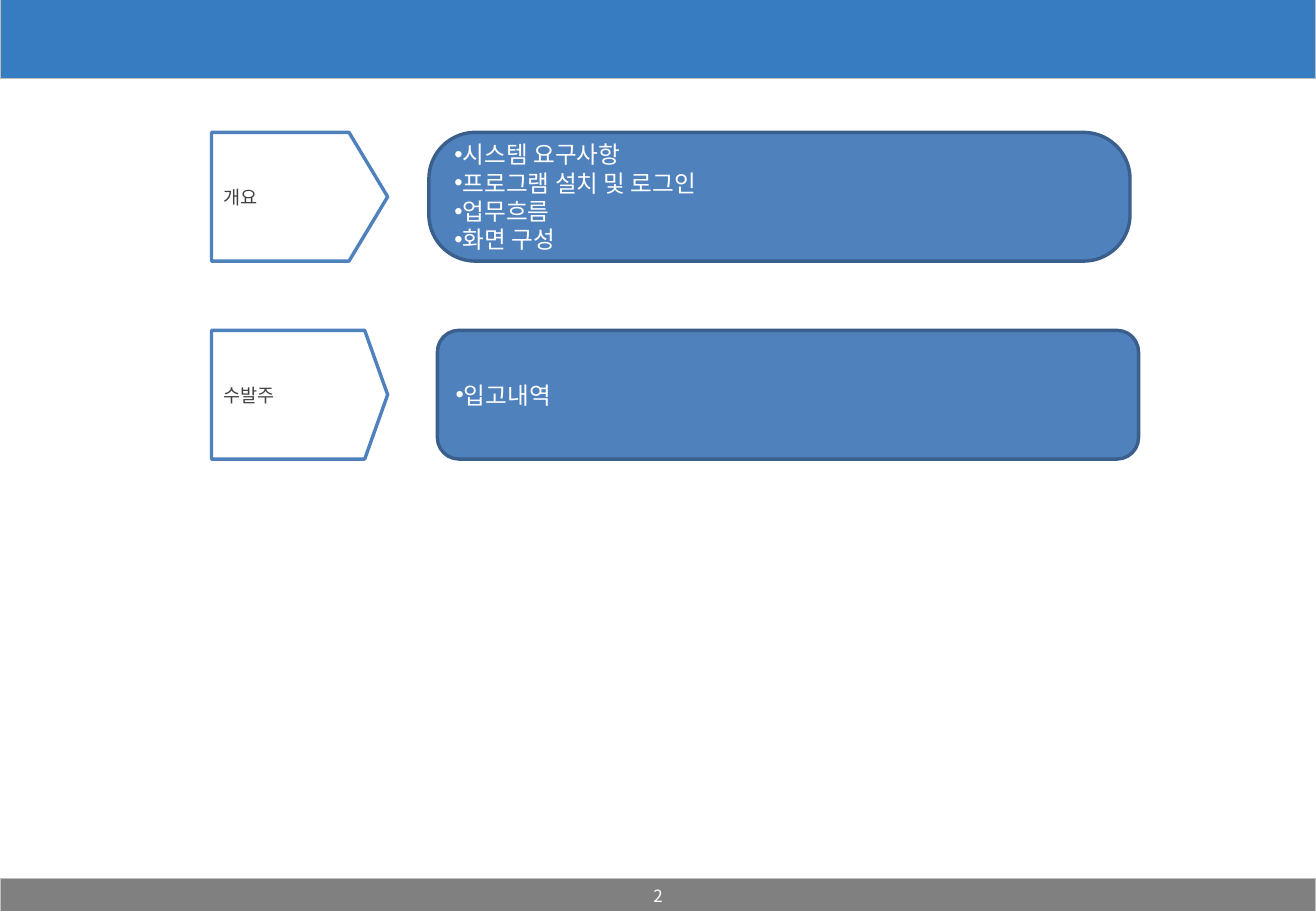
"""Build a contents slide that pairs each chapter arrow with its topics."""
from lxml import etree
from pptx import Presentation, util as u
from pptx.dml.color import RGBColor
from pptx.enum import shapes, text
from pptx.oxml.ns import qn

THEME = {
    "white": "FFFFFF", "header": "367CC1", "footer": "808080", "edge": "BFBFBF",
    "panel": "4F81BD", "panel_edge": "3A5F8C", "label": "404040",
    "latin": "Arial", "korean": "Noto Sans CJK KR",
    "topic_pt": 14, "leading_pt": 16.8, "label_pt": 11, "number_pt": 10,
}
W, H = 10.83, 7.5
ROW_TOP, ROW_STEP, ROW_H = 1.09, 1.63, 1.06
ARROW_X, ARROW_W, PANEL_W = 1.74, 1.45, 5.77

prs = Presentation()
prs.slide_width, prs.slide_height = u.Inches(W), u.Inches(H)
s = prs.slides.add_slide(prs.slide_layouts[6])


def add_box(kind, x, y, w, h, fill, line, weight, adj=None):
    sp = s.shapes.add_shape(kind, *map(u.Inches, (x, y, w, h)))
    sp.shadow.inherit = False
    sp.fill.solid()
    sp.fill.fore_color.rgb = RGBColor.from_string(THEME[fill])
    sp.line.color.rgb = RGBColor.from_string(THEME[line])
    sp.line.width = u.Pt(weight)
    if adj is not None:
        sp.adjustments[0] = adj
    return sp


def write(sp, lines, *, size, color, font="latin", align=text.PP_ALIGN.LEFT,
          bullet=None, leading=None, wrap=True):
    tf = sp.text_frame
    tf.word_wrap = wrap
    tf.vertical_anchor = text.MSO_ANCHOR.MIDDLE
    for i, line in enumerate(lines):
        p = tf.paragraphs[0] if i == 0 else tf.add_paragraph()
        p.alignment = align
        if leading:
            p.line_spacing = u.Pt(THEME[leading])
        if bullet:
            pPr = p._p.get_or_add_pPr()
            etree.SubElement(pPr, qn("a:buFont"), typeface=THEME["latin"])
            etree.SubElement(pPr, qn("a:buChar"), char=bullet)
        r = p.add_run()
        r.text = line
        r.font.size = u.Pt(THEME[size])
        r.font.color.rgb = RGBColor.from_string(THEME[color])
        r.font.name = THEME[font]
        etree.SubElement(r._r.get_or_add_rPr(), qn("a:ea"), typeface=THEME["korean"])


RECT = shapes.MSO_SHAPE.RECTANGLE
add_box(RECT, 0, 7.23, W, 0.28, "footer", "edge", 0.5)
add_box(RECT, 0, -0.01, W, 0.66, "header", "edge", 0.5)
number = s.shapes.add_textbox(*map(u.Inches, (W / 2 - 0.19, 7.24, 0.38, 0.27)))
write(number, ["2"], size="number_pt", color="white", font="korean",
      align=text.PP_ALIGN.CENTER, wrap=False)

chapters = [
    ("개요", 0.3, 3.53, 0.361,
     ["시스템 요구사항", "프로그램 설치 및 로그인", "업무흐름", "화면 구성"]),
    ("수발주", 0.178, 3.6, 0.167, ["입고내역"]),
]
for row, (title, point, panel_x, corner, topics) in enumerate(chapters):
    y = ROW_TOP + row * ROW_STEP
    panel = add_box(shapes.MSO_SHAPE.ROUNDED_RECTANGLE, panel_x, y, PANEL_W, ROW_H,
                    "panel", "panel_edge", 2, corner)
    write(panel, topics, size="topic_pt", color="white", bullet="•", leading="leading_pt")
    arrow = add_box(shapes.MSO_SHAPE.PENTAGON, ARROW_X, y, ARROW_W, ROW_H,
                    "white", "panel", 2, point)
    write(arrow, [title], size="label_pt", color="label")

prs.save("out.pptx")
